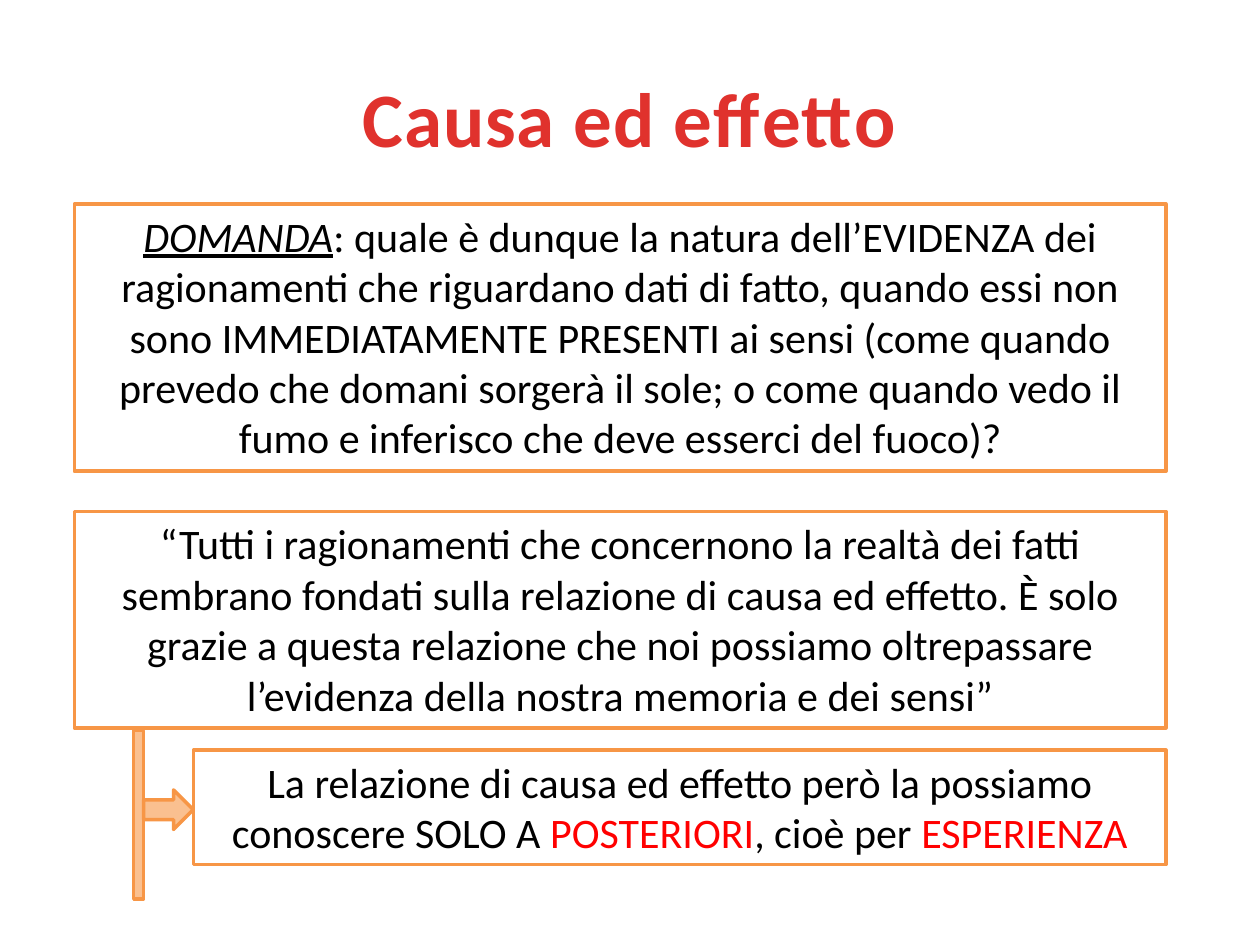
from dataclasses import dataclass

from pptx import Presentation
from pptx.dml.color import RGBColor
from pptx.enum.shapes import MSO_SHAPE
from pptx.enum.text import MSO_ANCHOR, MSO_AUTO_SIZE, PP_ALIGN
from pptx.util import Pt


@dataclass(frozen=True)
class Theme:
    font: str = "Calibri"
    head: int = 44
    body: int = 24
    edge: float = 2
    title: str = "E0322D"
    ink: str = "000000"
    mark: str = "FF0000"
    paper: str = "FFFFFF"
    line: str = "F79646"
    fill: str = "FAC090"


THEME = Theme()
LEFT, RIGHT = 42.5, 666.3  # shared edges of the boxes
WIDE = RIGHT - LEFT


def color(code):
    return RGBColor.from_string(code)


def add_title(slide, text):
    box = slide.shapes.add_textbox(Pt(36), Pt(21.6), Pt(648), Pt(90))
    frame = box.text_frame
    frame.word_wrap = True
    frame.vertical_anchor = MSO_ANCHOR.MIDDLE
    para = frame.paragraphs[0]
    para.alignment = PP_ALIGN.CENTER
    run = para.add_run()
    run.text = text
    font = run.font
    font.name, font.size, font.bold = THEME.font, Pt(THEME.head), True
    font.color.rgb = color(THEME.title)
    run._r.get_or_add_rPr().set("spc", "50")  # letter spacing


def add_form(slide, kind, left, top, width, height, fill):
    form = slide.shapes.add_shape(kind, Pt(left), Pt(top), Pt(width), Pt(height))
    form.shadow.inherit = False
    form.fill.solid()
    form.fill.fore_color.rgb = color(fill)
    form.line.color.rgb = color(THEME.line)
    form.line.width = Pt(THEME.edge)
    return form


def add_box(slide, left, top, height, parts):
    """Draw a framed text; parts are (text, style), style "", "mark" or "lead"."""
    box = add_form(slide, MSO_SHAPE.RECTANGLE, left, top, RIGHT - left, height,
                   THEME.paper)
    frame = box.text_frame
    frame.word_wrap = True
    frame.auto_size = MSO_AUTO_SIZE.SHAPE_TO_FIT_TEXT
    frame.vertical_anchor = MSO_ANCHOR.TOP
    para = frame.paragraphs[0]
    para.alignment = PP_ALIGN.CENTER
    para.font.name, para.font.size = THEME.font, Pt(THEME.body)
    for text, style in parts:
        run = para.add_run()
        run.text = text
        run.font.color.rgb = color(THEME.mark if style == "mark" else THEME.ink)
        if style == "lead":
            run.font.italic = run.font.underline = True


def main():
    deck = Presentation()
    deck.slide_width, deck.slide_height = Pt(720), Pt(540)
    slide = deck.slides.add_slide(deck.slide_layouts[6])

    add_title(slide, "Causa ed effetto")

    # Question and quotation
    add_box(slide, LEFT, 116.6, 152.7, [
        ("DOMANDA", "lead"),
        (": quale è dunque la natura dell’EVIDENZA dei ragionamenti che "
         "riguardano dati di fatto, quando essi non sono IMMEDIATAMENTE "
         "PRESENTI ai sensi (come quando prevedo che domani sorgerà il sole; "
         "o come quando vedo il fumo e inferisco che deve esserci del "
         "fuoco)?", ""),
    ])
    add_box(slide, LEFT, 292.4, 123.6, [
        ("“Tutti i ragionamenti che concernono la realtà dei fatti sembrano "
         "fondati sulla relazione di causa ed effetto. È solo grazie a questa "
         "relazione che noi possiamo oltrepassare l’evidenza della nostra "
         "memoria e dei sensi”", ""),
    ])

    # Stem and arrow to the conclusion
    add_form(slide, MSO_SHAPE.RECTANGLE, 76.4, 417.4, 5.7, 96.4, THEME.fill)
    add_form(slide, MSO_SHAPE.RIGHT_ARROW, 82.1, 451.4, 28.4, 22.6, THEME.fill)
    add_box(slide, 110.6, 428.7, 65.4, [
        ("La relazione di causa ed effetto però la possiamo conoscere SOLO A ", ""),
        ("POSTERIORI", "mark"),
        (", cioè per ", ""),
        ("ESPERIENZA", "mark"),
    ])

    deck.save("out.pptx")


if __name__ == "__main__":
    main()
